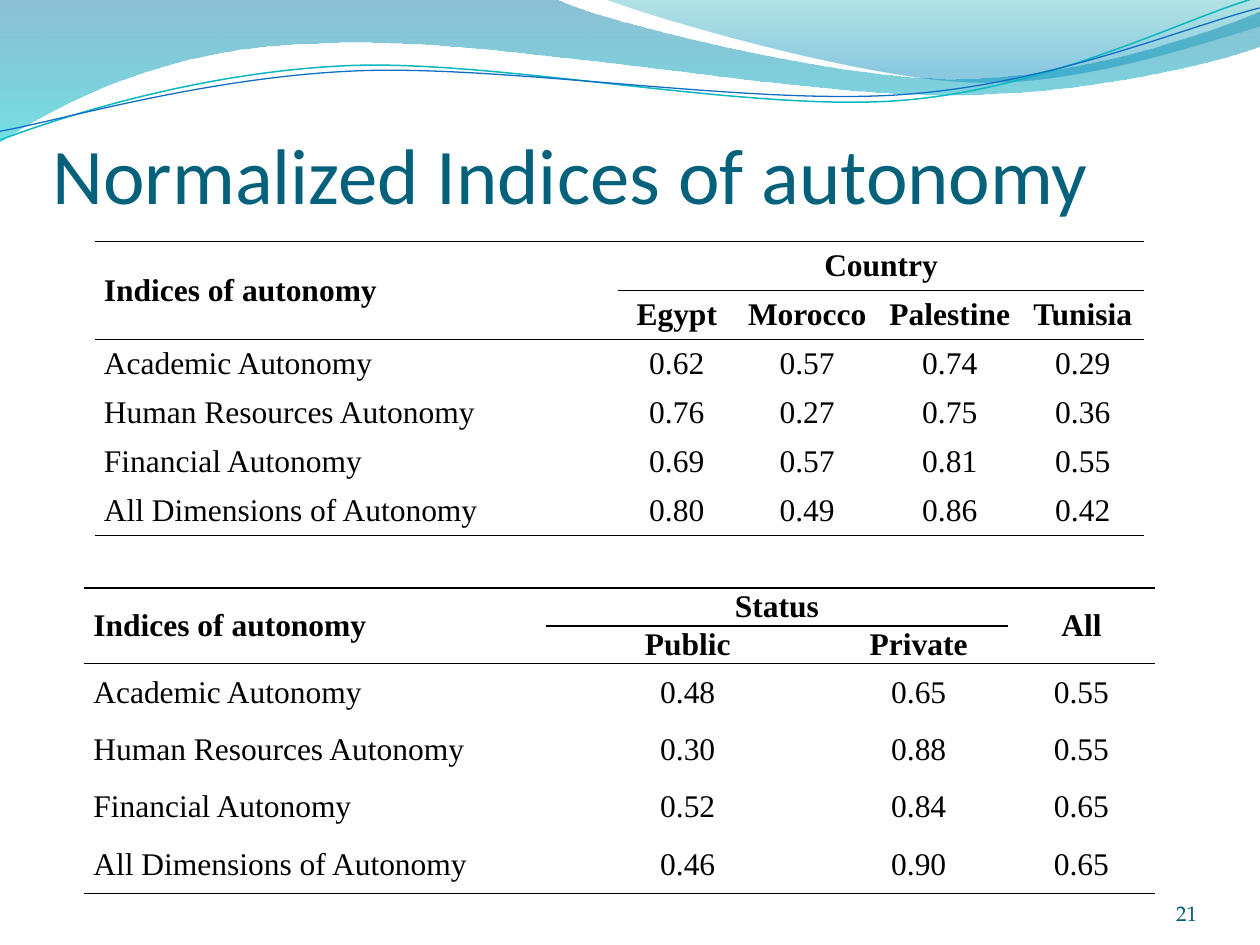
from lxml.etree import Element, SubElement
from pptx import Presentation
from pptx.dml.color import RGBColor
from pptx.enum.text import MSO_ANCHOR as Anchor, PP_ALIGN as Align
from pptx.oxml.ns import qn
from pptx.util import Pt

BLACK = RGBColor(0x00, 0x00, 0x00)
TITLE_BLUE = RGBColor(0x04, 0x61, 0x7B)
NUMBER_BLUE = RGBColor(0x04, 0x5D, 0x75)
DEEP_BLUE = RGBColor(0x00, 0x74, 0xA1)
TURQUOISE = RGBColor(0x00, 0xC6, 0xCF)
SEA_GREEN = RGBColor(0x00, 0xA1, 0xA9)
SKY_BLUE = RGBColor(0x00, 0x8B, 0xBF)
TEAL_LINE = RGBColor(0x0A, 0xB8, 0xBF)
BLUE_LINE = RGBColor(0x0F, 0x6F, 0xC6)

TABLE_FONT = "Times New Roman"
TABLE_SIZE = 18
PLAIN_TABLE_STYLE = "{2D5ABB26-0587-4C30-8999-92F81FD0307C}"

WIDE_WAVE = [
    [(0, 0)], [(317, -1)],
    [(343, 12), (478, 45), (546, 45)], [(614, 45), (690, 19), (720, 6.5)],
    [(721, 26)],
    [(708, 32), (626, 55), (537, 54)], [(448, 54), (275, 20), (185, 24.5)],
    [(93, 26), (33, 60), (-1, 81.5)], [(0, 0)],
]
RIGHT_WAVE = [
    [(345, -1)], [(366, 8), (491, 45), (554, 47)],
    [(616, 50), (692, 23), (720, 15)], [(720, 0)], [(345, -1)],
]
TEAL_CURVE = [
    [(0, 80)], [(34.5, 67), (114, 41), (199.5, 37.5)],
    [(284.5, 34), (427, 64), (513.5, 57.5)], [(600, 51), (675, 11), (718.5, -1.5)],
]
BLUE_CURVE = [
    [(0, 75)], [(34, 69), (118, 44), (204, 40.5)],
    [(290, 37), (430, 60.5), (516, 54)], [(602, 48), (678, 15), (720, 4.5)],
]

COUNTRY_ROWS = [
    ["Indices of autonomy", "Country", "", "", ""],
    ["", "Egypt", "Morocco", "Palestine", "Tunisia"],
    ["Academic Autonomy", "0.62", "0.57", "0.74", "0.29"],
    ["Human Resources Autonomy", "0.76", "0.27", "0.75", "0.36"],
    ["Financial Autonomy", "0.69", "0.57", "0.81", "0.55"],
    ["All Dimensions of Autonomy", "0.80", "0.49", "0.86", "0.42"],
]
STATUS_ROWS = [
    ["Indices of autonomy", "Status", "", "All"],
    ["", "Public", "Private", ""],
    ["Academic Autonomy", "0.48", "0.65", "0.55"],
    ["Human Resources Autonomy", "0.30", "0.88", "0.55"],
    ["Financial Autonomy", "0.52", "0.84", "0.65"],
    ["All Dimensions of Autonomy", "0.46", "0.90", "0.65"],
]


def add_outline(slide, segments, close):
    start, *others = [(Pt(x), Pt(y)) for segment in segments for x, y in segment]
    builder = slide.shapes.build_freeform(*start)
    builder.add_line_segments(others, close=close)
    shape = builder.convert_to_shape()
    shape.shadow.inherit = False
    steps = iter(list(shape.element.spPr.iter(qn("a:lnTo"))))
    for segment in segments[1:]:
        corners = [next(steps) for _ in segment]
        if len(corners) == 3:
            bend = Element(qn("a:cubicBezTo"))
            corners[0].addprevious(bend)
            for corner in corners:
                bend.append(corner[0])
                corner.getparent().remove(corner)
    return shape


def add_wave(slide, segments, stops):
    wave = add_outline(slide, segments, True)
    wave.line.fill.background()
    wave.fill.gradient()
    wave.fill.gradient_angle = 270
    for stop, (position, color, _) in zip(wave.fill.gradient_stops, stops):
        stop.position = position
        stop.color.rgb = color
    for color_node, (_, _, opacity) in zip(wave.element.spPr.iter(qn("a:srgbClr")), stops):
        SubElement(color_node, qn("a:alpha"), val=str(opacity * 1000))


def add_curve(slide, segments, color, width):
    curve = add_outline(slide, segments, False)
    curve.fill.background()
    curve.line.color.rgb = color
    curve.line.width = Pt(width)


def add_run(paragraph, text, font, size, color, bold=False):
    run = paragraph.add_run()
    run.text = text
    run.font.name = font
    run.font.size = Pt(size)
    run.font.color.rgb = color
    run.font.bold = bold


def set_margins(box, left, top, right, bottom):
    box.margin_left, box.margin_top = Pt(left), Pt(top)
    box.margin_right, box.margin_bottom = Pt(right), Pt(bottom)


def place_title(slide, text):
    title = slide.shapes.title
    title.left, title.top, title.width, title.height = Pt(30), Pt(36), Pt(648), Pt(90)
    slide.shapes.element.append(title.element)
    frame = title.text_frame
    frame.word_wrap = True
    frame.vertical_anchor = Anchor.BOTTOM
    set_margins(frame, 0, 3.6, 0, 0)
    frame.paragraphs[0].alignment = Align.LEFT
    add_run(frame.paragraphs[0], text, "Calibri", 45, TITLE_BLUE)


def add_page_number(slide, number):
    frame = slide.shapes.add_textbox(Pt(624), Pt(500.5), Pt(60), Pt(28.5)).text_frame
    frame.word_wrap = True
    frame.vertical_anchor = Anchor.BOTTOM
    set_margins(frame, 0, 0, 0, 0)
    frame.paragraphs[0].alignment = Align.RIGHT
    add_run(frame.paragraphs[0], number, "TeX Gyre Pagella", 12, NUMBER_BLUE)


def rule_cell(cell, ruled_sides):
    for side in ("lnL", "lnR", "lnT", "lnB"):
        border = SubElement(cell._tc.get_or_add_tcPr(), qn(f"a:{side}"), w=str(Pt(1)))
        if side in ruled_sides:
            fill = SubElement(border, qn("a:solidFill"))
            SubElement(fill, qn("a:srgbClr"), val=str(BLACK))
        else:
            SubElement(border, qn("a:noFill"))


def fill_cell(cell, text, alignment, bold):
    cell.fill.background()
    cell.vertical_anchor = Anchor.MIDDLE
    set_margins(cell, 5.4, 0, 5.4, 0)
    paragraph = cell.text_frame.paragraphs[0]
    paragraph.alignment = alignment
    if text:
        add_run(paragraph, text, TABLE_FONT, TABLE_SIZE, BLACK, bold)
    else:
        ending = SubElement(paragraph._p, qn("a:endParaRPr"), sz=str(TABLE_SIZE * 100))
        SubElement(ending, qn("a:latin"), typeface=TABLE_FONT)


def add_index_table(slide, left, top, widths, heights, rows, merges):
    frame = slide.shapes.add_table(len(rows), len(widths), Pt(left), Pt(top),
                                   Pt(sum(widths)), Pt(sum(heights)))
    table = frame.table
    table.first_row = table.horz_banding = False
    table._tbl.tblPr.find(qn("a:tableStyleId")).text = PLAIN_TABLE_STYLE
    for column, width in zip(table.columns, widths):
        column.width = Pt(width)
    for row, height in zip(table.rows, heights):
        row.height = Pt(height)
    for first, last in merges:
        table.cell(*first).merge(table.cell(*last))
    for r, texts in enumerate(rows):
        for c, text in enumerate(texts):
            cell = table.cell(r, c)
            ruled_sides = []
            if r <= 2 and not (r == 1 and cell.is_spanned):
                ruled_sides.append("lnT")
            if r <= 1 or r == len(rows) - 1:
                ruled_sides.append("lnB")
            rule_cell(cell, ruled_sides)
            fill_cell(cell, text, Align.CENTER if c else Align.LEFT, r < 2)


def main():
    deck = Presentation()
    deck.slide_width, deck.slide_height = Pt(720), Pt(540)
    slide = deck.slides.add_slide(deck.slide_layouts[5])
    add_wave(slide, WIDE_WAVE, [(0, DEEP_BLUE, 45), (1, TURQUOISE, 55)])
    add_wave(slide, RIGHT_WAVE, [(0, SEA_GREEN, 30), (0.8, SKY_BLUE, 45)])
    add_curve(slide, TEAL_CURVE, TEAL_LINE, 0.85)
    add_curve(slide, BLUE_CURVE, BLUE_LINE, 0.75)
    place_title(slide, "Normalized Indices of autonomy")
    add_page_number(slide, "21")
    add_index_table(slide, 54, 138, [299, 67.5, 81.5, 81.5, 70.5], [28] * 6, COUNTRY_ROWS,
                    [((0, 0), (1, 0)), ((0, 1), (0, 4))])
    add_index_table(slide, 48, 336, [264, 162, 102, 84], [8, 16.5] + [32.8] * 4, STATUS_ROWS,
                    [((0, 0), (1, 0)), ((0, 1), (0, 2)), ((0, 3), (1, 3))])
    deck.save("out.pptx")


if __name__ == "__main__":
    main()
